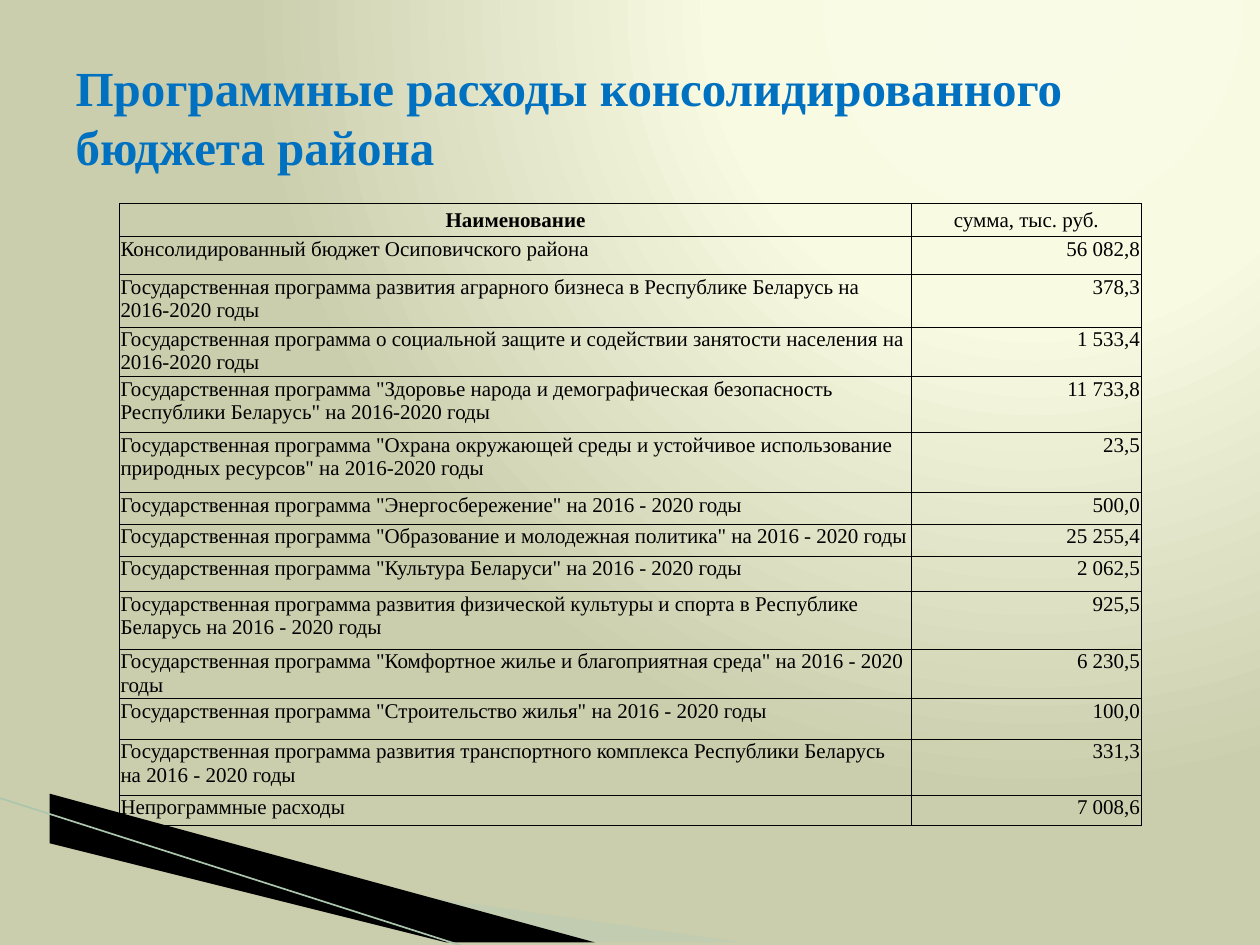
"""Builds a slide with a table of programme spending in a district budget."""
from lxml import etree
from pptx import Presentation
from pptx.dml.color import RGBColor
from pptx.enum.shapes import MSO_CONNECTOR
from pptx.enum.text import MSO_ANCHOR, PP_ALIGN
from pptx.oxml import parse_xml
from pptx.oxml.ns import nsdecls, qn
from pptx.util import Cm, Pt

LEFT, CENTER, RIGHT = PP_ALIGN.LEFT, PP_ALIGN.CENTER, PP_ALIGN.RIGHT
TOP, MIDDLE = MSO_ANCHOR.TOP, MSO_ANCHOR.MIDDLE
STRAIGHT = MSO_CONNECTOR.STRAIGHT
BLACK = RGBColor(0x00, 0x00, 0x00)
BLUE = RGBColor(0x00, 0x70, 0xC0)
SAGE = RGBColor(0xB3, 0xCB, 0xB5)
LINE_GREEN = RGBColor(0xAC, 0xC6, 0xAE)
GLOW = RGBColor(0xF9, 0xFB, 0xE7)
CREAM = RGBColor(0xF8, 0xFA, 0xE2)
OLIVE = RGBColor(0xCB, 0xCE, 0xAD)
FONT = "Times New Roman"

ROWS = [
    ("Наименование", "сумма, тыс. руб.", 0.66),
    ("Консолидированный бюджет Осиповичского района", "56 082,8", 0.77),
    ("Государственная программа развития аграрного бизнеса в Республике Беларусь на 2016-2020 годы", "378,3", 1.05),
    ("Государственная программа о социальной защите и содействии занятости населения на 2016-2020 годы", "1 533,4", 1),
    ("Государственная программа \"Здоровье народа и демографическая безопасность Республики Беларусь\" "
     "на 2016-2020 годы", "11 733,8", 1.13),
    ("Государственная программа \"Охрана окружающей среды и устойчивое использование природных ресурсов\" "
     "на 2016-2020 годы", "23,5", 1.21),
    ("Государственная программа \"Энергосбережение\" на 2016 - 2020 годы", "500,0", 0.64),
    ("Государственная программа \"Образование и молодежная политика\" на 2016 - 2020 годы", "25 255,4", 0.64),
    ("Государственная программа \"Культура Беларуси\" на 2016 - 2020 годы", "2 062,5", 0.72),
    ("Государственная программа развития физической культуры и спорта в Республике Беларусь "
     "на 2016 - 2020 годы", "925,5", 1.16),
    ("Государственная программа \"Комфортное жилье и благоприятная среда\" на 2016 - 2020 годы", "6 230,5", 0.99),
    ("Государственная программа \"Строительство жилья\" на 2016 - 2020 годы", "100,0", 0.82),
    ("Государственная программа развития транспортного комплекса Республики Беларусь "
     "на 2016 - 2020 годы", "331,3", 1.13),
    ("Непрограммные расходы", "7 008,6", 0.62),
]
COLUMN_WIDTHS = (15.97, 4.62)


def format_text(frame, text, align, **font_values):
    """Write one paragraph with the given alignment and font values."""
    para = frame.paragraphs[0]
    para.alignment = align
    span = para.add_run()
    span.text = text
    color = font_values.pop("color")
    for name, value in font_values.items():
        setattr(span.font, name, value)
    span.font.color.rgb = color


def add_borders(cell):
    """Draw a thin black line on every side of a cell."""
    properties = cell._tc.get_or_add_tcPr()
    for index, side in enumerate(("lnL", "lnR", "lnT", "lnB")):
        properties.insert(index, parse_xml(
            f'<a:{side} {nsdecls("a")} w="{Pt(0.5)}"><a:solidFill>'
            f'<a:srgbClr val="{BLACK}"/></a:solidFill></a:{side}>'))


deck = Presentation()
deck.slide_width, deck.slide_height = Cm(25.4), Cm(19.05)
page = deck.slides.add_slide(deck.slide_layouts[5])

page.background.fill.solid()
background = page._element.find(".//" + qn("p:bgPr"))
stops = "".join(f'<a:gs pos="{place * 1000}"><a:srgbClr val="{color}"/></a:gs>'
                for place, color in ((0, GLOW), (40, CREAM), (100, OLIVE)))
background.replace(background[0], parse_xml(
    f'<a:gradFill {nsdecls("a")} rotWithShape="1"><a:gsLst>{stops}</a:gsLst>'
    '<a:path path="circle"><a:fillToRect l="65000" t="0" r="0" b="98000"/></a:path></a:gradFill>'))

wedges = [
    (SAGE, 40, [(1.4, 16.54), (15.11, 19.08), (11.58, 19.08), (1.4, 16.51)]),
    (BLACK, 100, [(1.35, 16.48), (11.61, 19.08), (9.45, 19.1), (1.37, 16.51)]),
]
for color, opacity, points in wedges:
    builder = page.shapes.build_freeform(*points[0], scale=Cm(1))
    builder.add_line_segments(points[1:], close=True)
    wedge = builder.convert_to_shape()
    wedge.shadow.inherit = False
    wedge.fill.solid()
    wedge.fill.fore_color.rgb = color
    wedge.line.fill.background()
    if opacity < 100:
        tint = wedge._element.spPr.find(".//" + qn("a:srgbClr"))
        etree.SubElement(tint, qn("a:alpha")).set("val", str(opacity * 1000))

edge = page.shapes.add_connector(STRAIGHT, Cm(-0.03), Cm(16.08), Cm(9.42), Cm(19.1))
edge.line.color.rgb = LINE_GREEN
edge.line.width = Pt(0.95)
etree.SubElement(edge._element.spPr, qn("a:effectLst"))

table = page.shapes.add_table(
    len(ROWS), 2, Cm(2.41), Cm(4.11), Cm(sum(COLUMN_WIDTHS)), Cm(sum(row[2] for row in ROWS))).table
table.first_row = table.horz_banding = False
for column, width in zip(table.columns, COLUMN_WIDTHS):
    column.width = Cm(width)
cell_format = {"margin_left": Cm(0.02), "margin_right": Cm(0.02), "margin_top": Cm(0.02), "margin_bottom": 0}
for index, (name, amount, height) in enumerate(ROWS):
    table.rows[index].height = Cm(height)
    header = index == 0
    for position, (text, align) in enumerate(((name, LEFT), (amount, RIGHT))):
        cell = table.cell(index, position)
        for key, value in cell_format.items():
            setattr(cell, key, value)
        cell.vertical_anchor = MIDDLE if header else TOP
        cell.fill.background()
        add_borders(cell)
        format_text(cell.text_frame, text, CENTER if header else align, name=FONT,
                    size=Pt(12), bold=header and position == 0, color=BLACK)

title = page.shapes.title
title_format = {"left": Cm(1.27), "top": Cm(0.76), "width": Cm(22.86), "height": Cm(3.18)}
for key, value in title_format.items():
    setattr(title, key, value)
title.text_frame.word_wrap = True
title.text_frame.vertical_anchor = MIDDLE
format_text(title.text_frame, "Программные расходы консолидированного бюджета района", LEFT,
            name=FONT, size=Pt(28), bold=True, color=BLUE)
page.shapes._spTree.append(title._element)

deck.save("out.pptx")
